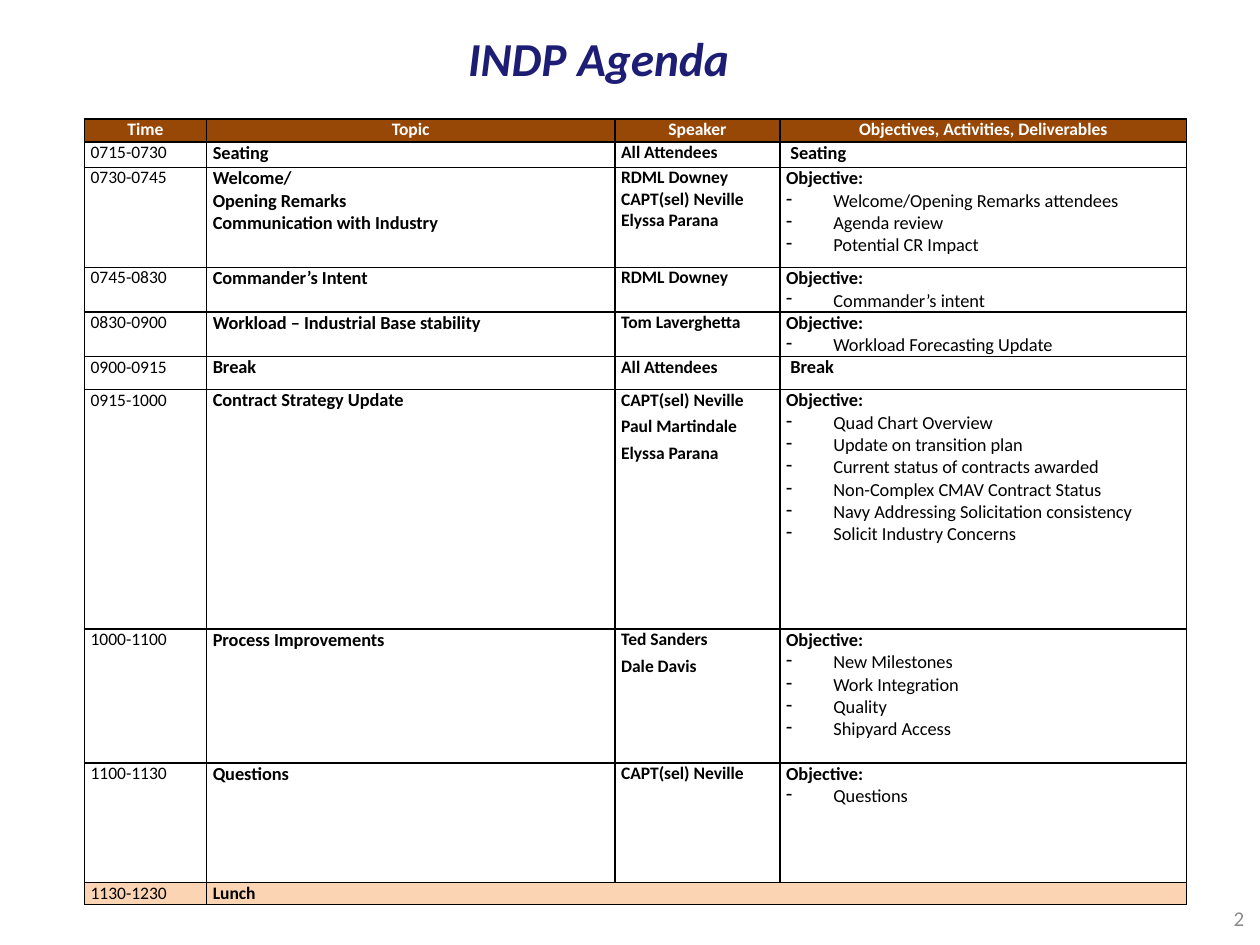
from dataclasses import dataclass
from lxml import etree
from pptx import Presentation
from pptx.dml.color import RGBColor
from pptx.enum import text
from pptx.oxml import ns
from pptx.util import Pt


@dataclass(frozen=True)
class Theme:
    font: str = "Calibri"
    navy: str = "1D1D75"
    brown: str = "984806"
    peach: str = "FBD4B4"
    black: str = "000000"
    white: str = "FFFFFF"
    grey: str = "8C8C8C"
    title: float = 27
    number: float = 12
    topic: float = 10.5
    small: float = 10


theme = Theme()
align = text.PP_ALIGN


def style(paragraph, size, color, bold=False, italic=False, alignment=align.LEFT):
    paragraph.alignment = alignment
    font = paragraph.font
    font.name, font.size = theme.font, Pt(size)
    font.bold, font.italic = bold, italic
    font.color.rgb = RGBColor.from_string(color)


def outline(cell):
    properties = cell._tc.get_or_add_tcPr()
    for position, side in enumerate(("lnL", "lnR", "lnT", "lnB")):
        line = etree.Element(ns.qn(f"a:{side}"), w=str(Pt(1)))
        solid = etree.SubElement(line, ns.qn("a:solidFill"))
        etree.SubElement(solid, ns.qn("a:srgbClr"), val=theme.black)
        properties.insert(position, line)


headings = ["Time", "Topic", "Speaker", "Objectives, Activities, Deliverables"]
sessions = [
    ("0715-0730", ["Seating"], ["All Attendees"], ["Seating"]),
    ("0730-0745", ["Welcome/", "Opening Remarks", "Communication with Industry"],
     ["RDML Downey", "CAPT(sel) Neville", "Elyssa Parana"],
     ["Objective:", "Welcome/Opening Remarks attendees", "Agenda review", "Potential CR Impact"]),
    ("0745-0830", ["Commander’s Intent"], ["RDML Downey"],
     ["Objective:", "Commander’s intent"]),
    ("0830-0900", ["Workload – Industrial Base stability"], ["Tom Laverghetta"],
     ["Objective:", "Workload Forecasting Update"]),
    ("0900-0915", ["Break"], ["All Attendees"], ["Break"]),
    ("0915-1000", ["Contract Strategy Update"],
     ["CAPT(sel) Neville", "Paul Martindale", "Elyssa Parana"],
     ["Objective:", "Quad Chart Overview", "Update on transition plan",
      "Current status of contracts awarded", "Non-Complex CMAV Contract Status",
      "Navy Addressing Solicitation consistency", "Solicit Industry Concerns"]),
    ("1000-1100", ["Process Improvements"], ["Ted Sanders", "Dale Davis"],
     ["Objective:", "New Milestones", "Work Integration", "Quality", "Shipyard Access"]),
    ("1100-1130", ["Questions"], ["CAPT(sel) Neville"], ["Objective:", "Questions"]),
    ("1130-1230", ["Lunch"], [], []),
]
column_widths = [69.8, 233.4, 94.3, 232.4]
row_heights = [13.2, 14.5, 57.1, 25.5, 25.5, 18.9, 136.9, 76.6, 68.3, 12.5]
spaced_speakers = {"0915-1000", "1000-1100"}

prs = Presentation()
prs.slide_width, prs.slide_height = Pt(720), Pt(540)
slide = prs.slides.add_slide(prs.slide_layouts[6])

for words, box, size, color, strong, alignment in [
    ("INDP Agenda", (18, 6, 648, 54), theme.title, theme.navy, True, align.CENTER),
    ("2", (550, 510, 168, 28.8), theme.number, theme.grey, False, align.RIGHT),
]:
    frame = slide.shapes.add_textbox(*map(Pt, box)).text_frame
    frame.word_wrap = True
    frame.vertical_anchor = text.MSO_ANCHOR.MIDDLE
    frame.text = words
    style(frame.paragraphs[0], size, color, strong, strong, alignment)

agenda = slide.shapes.add_table(
    len(row_heights), len(column_widths), Pt(48.2), Pt(68),
    Pt(sum(column_widths)), Pt(sum(row_heights))).table
agenda.first_row = agenda.horz_banding = False
for column, width in zip(agenda.columns, column_widths):
    column.width = Pt(width)
for row, height in zip(agenda.rows, row_heights):
    row.height = Pt(height)

lunch_row = len(sessions)
rows = [[[heading] for heading in headings]]
rows += [[[time], *details] for time, *details in sessions]
for r, contents in enumerate(rows):
    for c, lines in enumerate(contents):
        cell = agenda.cell(r, c)
        cell.margin_left = cell.margin_right = Pt(3.6)
        cell.margin_top = cell.margin_bottom = 0
        if r in (0, lunch_row):
            cell.fill.solid()
            cell.fill.fore_color.rgb = RGBColor.from_string(theme.peach if r else theme.brown)
        else:
            cell.fill.background()
        outline(cell)
        cell.text = "\n".join(lines)
        for i, paragraph in enumerate(cell.text_frame.paragraphs):
            listed = c == 3 and i > 0
            if listed:
                layout = paragraph._p.get_or_add_pPr()
                layout.set("marL", str(Pt(27)))
                layout.set("indent", str(-Pt(27)))
                etree.SubElement(layout, ns.qn("a:buChar"), char="-")
            elif c == 3 and r and len(lines) == 1:
                paragraph._p.get_or_add_pPr().set("marL", str(Pt(2.4)))
            if c == 2 and i and contents[0][0] in spaced_speakers:
                paragraph.space_before = Pt(3)
            if r == 0:
                style(paragraph, theme.small, theme.white, True, alignment=align.CENTER)
            else:
                size = theme.topic if c in (1, 3) and r < lunch_row else theme.small
                style(paragraph, size, theme.black, c > 0 and not listed)

agenda.cell(lunch_row, 1).merge(agenda.cell(lunch_row, 3))

prs.save("out.pptx")
